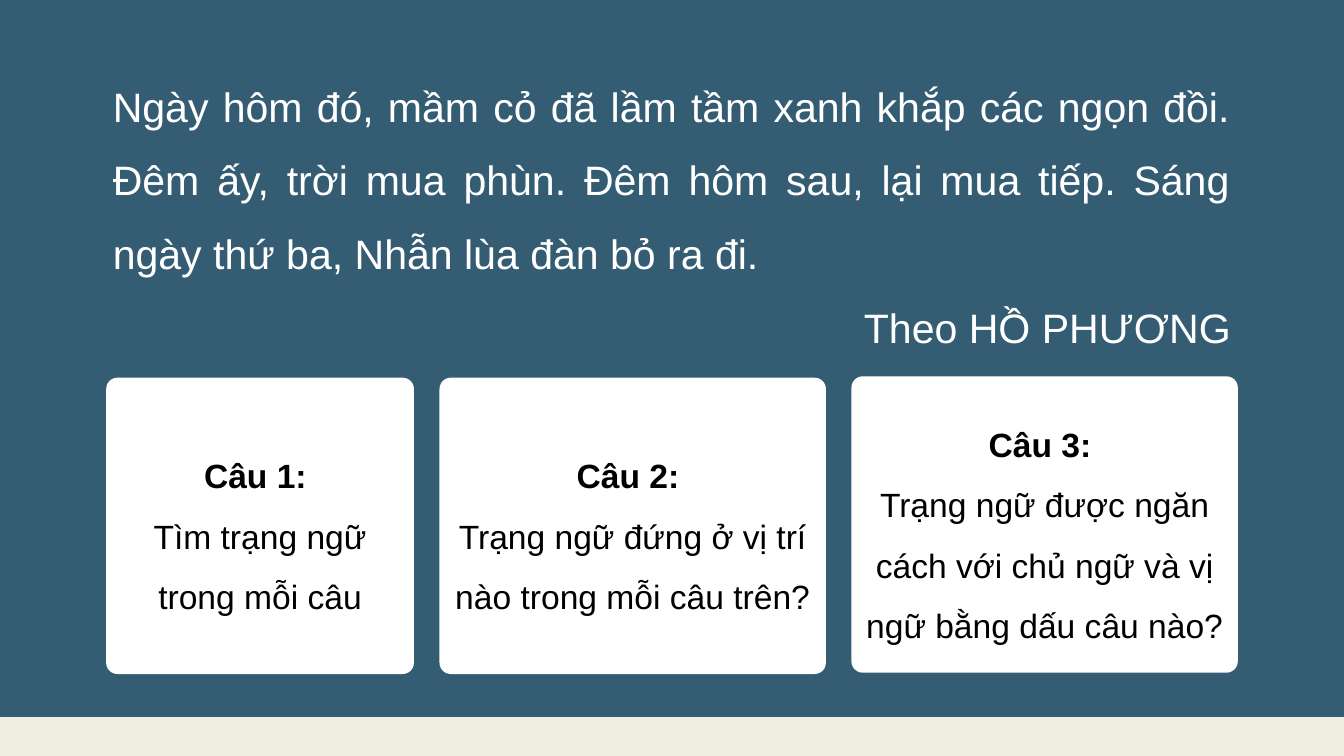
from pptx import Presentation
from pptx import util as u
from pptx.dml import color
from pptx.enum import shapes, text

COLORS = {"background": "345C72", "strip": "EEEEE1", "card": "FFFFFF",
          "passage": "FFFFFF", "question": "000000"}
CELL = u.Inches(1)
COLUMNS, ROWS = 20, 11.25
LEFT, WIDTH = 1.58, 16.84
GAP = 0.38
CORNER = 0.038

PASSAGE = ("Ngày hôm đó, mầm cỏ đã lầm tầm xanh khắp các ngọn đồi. "
           "Đêm ấy, trời mua phùn. Đêm hôm sau, lại mua tiếp. "
           "Sáng ngày thứ ba, Nhẫn lùa đàn bỏ ra đi.")
AUTHOR = "Theo HỒ PHƯƠNG"
QUESTIONS = [
    ("Câu 1: ", "Tìm trạng ngữ trong mỗi câu", 4.58, 0),
    ("Câu 2: ", "Trạng ngữ đứng ở vị trí nào trong mỗi câu trên?", 5.75, 0),
    ("Câu 3: ", "Trạng ngữ được ngăn cách với chủ ngữ và vị ngữ bằng dấu câu nào?",
     5.75, 0.02),
]


def rgb(name):
    return color.RGBColor.from_string(COLORS[name])


def on_grid(box):
    return [u.Emu(round(length * CELL)) for length in box]


def add_block(slide, kind, box, fill):
    shape = slide.shapes.add_shape(kind, *on_grid(box))
    shape.shadow.inherit = False
    shape.fill.solid()
    shape.fill.fore_color.rgb = rgb(fill)
    shape.line.fill.background()
    return shape


def write(frame, lines, size, ink):
    frame.word_wrap = True
    for number, (words, align, bold) in enumerate(lines):
        paragraph = frame.add_paragraph() if number else frame.paragraphs[0]
        paragraph.alignment = align
        paragraph.line_spacing = 1.5
        run = paragraph.add_run()
        run.text = words
        run.font.color.rgb = rgb(ink)
        for name, value in {"name": "Arial", "size": u.Pt(size), "bold": bold}.items():
            setattr(run.font, name, value)


def add_strip(slide, box):
    add_block(slide, shapes.MSO_SHAPE.RECTANGLE, box, "strip")


def add_passage(slide, box):
    shape = slide.shapes.add_textbox(*on_grid(box))
    write(shape.text_frame,
          [(PASSAGE, text.PP_ALIGN.JUSTIFY, False), (AUTHOR, text.PP_ALIGN.RIGHT, False)],
          44, "passage")


def add_questions(slide, box):
    left, top, _, height = box
    for title, question, width, rise in QUESTIONS:
        card = add_block(slide, shapes.MSO_SHAPE.ROUNDED_RECTANGLE,
                         (left, top - rise, width, height), "card")
        card.adjustments[0] = CORNER
        card.text_frame.vertical_anchor = text.MSO_ANCHOR.MIDDLE
        write(card.text_frame,
              [(title, text.PP_ALIGN.CENTER, True), (question, text.PP_ALIGN.CENTER, False)],
              36, "question")
        left += width + GAP


def main():
    presentation = Presentation()
    presentation.slide_width, presentation.slide_height = on_grid((COLUMNS, ROWS))
    slide = presentation.slides.add_slide(presentation.slide_layouts[6])
    slide.background.fill.solid()
    slide.background.fill.fore_color.rgb = rgb("background")
    add_strip(slide, (0, 10.67, COLUMNS, ROWS - 10.67))
    add_passage(slide, (LEFT, 0.79, WIDTH, 4.41))
    add_questions(slide, (LEFT, 5.62, WIDTH, 4.41))
    presentation.save("out.pptx")


if __name__ == "__main__":
    main()
